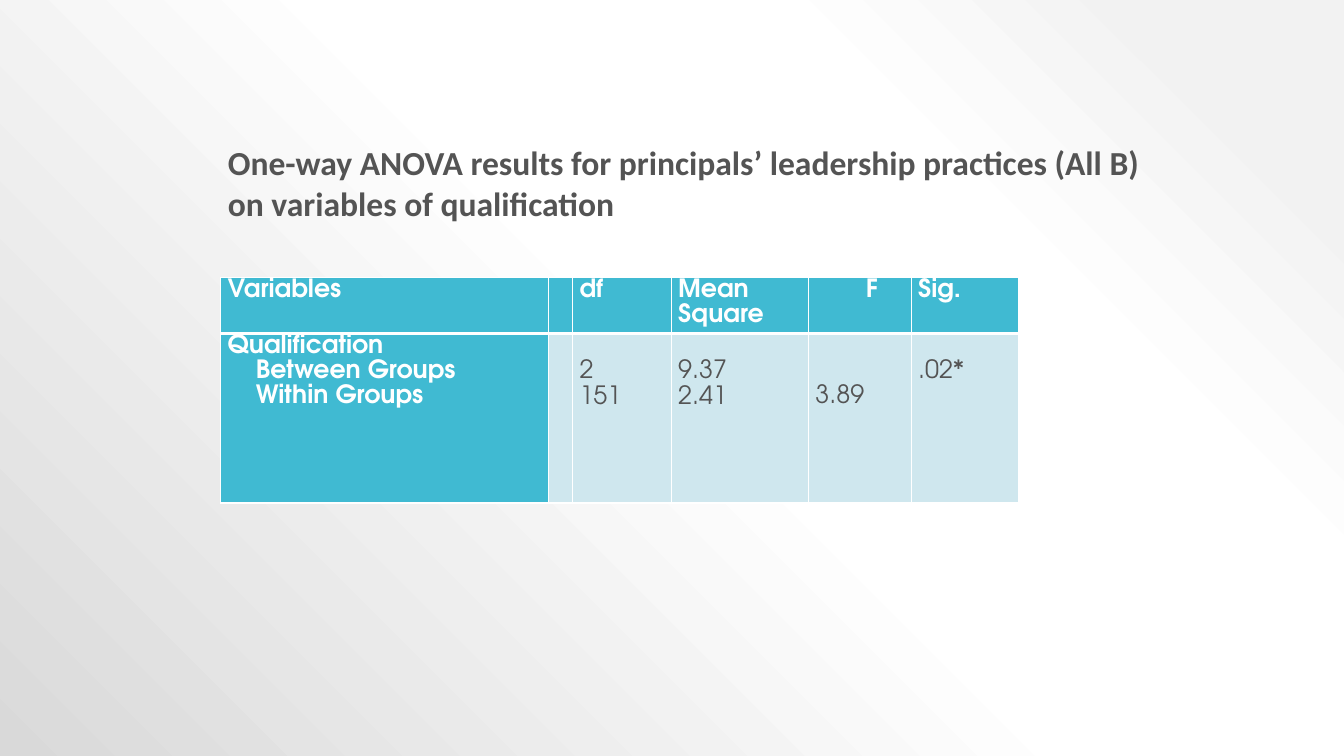
from dataclasses import dataclass

from pptx import Presentation
from pptx.dml.color import RGBColor
from pptx.enum.text import MSO_ANCHOR, MSO_AUTO_SIZE, PP_ALIGN
from pptx.oxml import parse_xml
from pptx.oxml.ns import nsdecls
from pptx.util import Pt

TITLE = [
    "One-way ANOVA results for principals’ leadership practices (All B)",
    "on variables of qualification",
]
HEADER = ["Variables", "", "df", "Mean Square", "F", "Sig."]
BODY = [
    ["Qualification", "Between Groups", "Within Groups"],
    [],
    ["2", "151"],
    ["9.37", "2.41"],
    ["3.89"],
    [".02*"],
]
BODY_LINES_ABOVE = [0, 0, 1, 1, 2, 1]
INDENTS = {"Between Groups": 20, "Within Groups": 20, "F": 36}
COLUMN_WIDTHS = [234, 17.3, 70.5, 98, 73.4, 77]
ROW_HEIGHTS = [40.3, 121]
TABLE_LEFT, TABLE_TOP = 157.7, 198
TITLE_BOX = (155.5, 98, 677.5, 87)
BACKDROP_STOPS = [(10, "F2F2F2"), (28, "FFFFFF"), (48, "FFFFFF"), (100, "D9D9D9")]


@dataclass(frozen=True)
class Theme:
    text: str = "545454"
    light: str = "FFFFFF"
    accent: str = "40BAD2"
    tint: str = "CFE7EE"
    title_font: str = "Calibri"
    table_font: str = "TeX Gyre Adventor"
    title_size: float = 24
    table_size: float = 18
    line_spacing: float = 1.07
    line_height: float = 17.9
    side_margin: float = 5
    thin: float = 1
    thick: float = 3


THEME = Theme()


def style_text(para, font, size, color, bold):
    para.alignment = PP_ALIGN.LEFT
    for span in para.runs:
        span.font.name = font
        span.font.size = Pt(size)
        span.font.bold = bold
        span.font.color.rgb = RGBColor.from_string(color)


def paint_backdrop(page):
    stops = "".join(
        f'<a:gs pos="{place * 1000}"><a:srgbClr val="{color}"/></a:gs>'
        for place, color in BACKDROP_STOPS
    )
    backdrop = parse_xml(
        f'<p:bg {nsdecls("p", "a")}><p:bgPr><a:gradFill rotWithShape="1">'
        f'<a:gsLst>{stops}</a:gsLst><a:path path="circle">'
        '<a:fillToRect l="100000" b="100000"/></a:path></a:gradFill>'
        "<a:effectLst/></p:bgPr></p:bg>"
    )
    page.element.cSld.insert(0, backdrop)


def add_title(page):
    title = page.shapes.title
    title.left, title.top, title.width, title.height = map(Pt, TITLE_BOX)
    frame = title.text_frame
    frame.text = "\n".join(TITLE)
    frame.word_wrap = True
    frame.auto_size = MSO_AUTO_SIZE.NONE
    frame.vertical_anchor = MSO_ANCHOR.TOP
    for para in frame.paragraphs:
        para.line_spacing = 1.0
        para.space_before = Pt(0)
        style_text(para, THEME.title_font, THEME.title_size, THEME.text, True)


def set_borders(cell, bottom):
    properties = cell._tc.get_or_add_tcPr()
    widths = {"lnL": THEME.thin, "lnR": THEME.thin, "lnT": THEME.thin, "lnB": bottom}
    for index, (side, width) in enumerate(widths.items()):
        border = parse_xml(
            f'<a:{side} {nsdecls("a")} w="{Pt(width)}"><a:solidFill>'
            f'<a:srgbClr val="{THEME.light}"/></a:solidFill></a:{side}>'
        )
        properties.insert(index, border)


def fill_cell(cell, lines, lines_above, strong, bottom):
    cell.margin_left = cell.margin_right = Pt(THEME.side_margin)
    cell.margin_top = Pt(lines_above * THEME.line_height)
    cell.margin_bottom = Pt(0)
    cell.fill.solid()
    cell.fill.fore_color.rgb = RGBColor.from_string(THEME.accent if strong else THEME.tint)
    set_borders(cell, bottom)
    cell.text_frame.text = "\n".join(lines)
    color = THEME.light if strong else THEME.text
    for para in cell.text_frame.paragraphs:
        para.line_spacing = THEME.line_spacing
        style_text(para, THEME.table_font, THEME.table_size, color, strong)
        if para.text in INDENTS:
            para._p.get_or_add_pPr().set("marL", str(Pt(INDENTS[para.text])))


def add_results(page):
    frame = page.shapes.add_table(
        len(ROW_HEIGHTS), len(COLUMN_WIDTHS), Pt(TABLE_LEFT), Pt(TABLE_TOP),
        Pt(sum(COLUMN_WIDTHS)), Pt(sum(ROW_HEIGHTS)),
    )
    table = frame.table
    table.horz_banding = False
    for row, height in zip(table.rows, ROW_HEIGHTS):
        row.height = Pt(height)
    for index, width in enumerate(COLUMN_WIDTHS):
        table.columns[index].width = Pt(width)
        fill_cell(table.cell(0, index), [HEADER[index]], 0, True, THEME.thick)
        fill_cell(table.cell(1, index), BODY[index], BODY_LINES_ABOVE[index],
                  index == 0, THEME.thin)
        if index:
            continue
    for index in range(len(COLUMN_WIDTHS)):
        top = table.cell(1, index)._tc.tcPr.find(
            "{http://schemas.openxmlformats.org/drawingml/2006/main}lnT")
        top.set("w", str(Pt(THEME.thick)))


def main():
    """Build the slide of one-way ANOVA results by qualification."""
    deck = Presentation()
    deck.slide_width, deck.slide_height = Pt(960), Pt(540)
    page = deck.slides.add_slide(deck.slide_layouts[5])
    paint_backdrop(page)
    add_title(page)
    add_results(page)
    deck.save("out.pptx")


if __name__ == "__main__":
    main()
